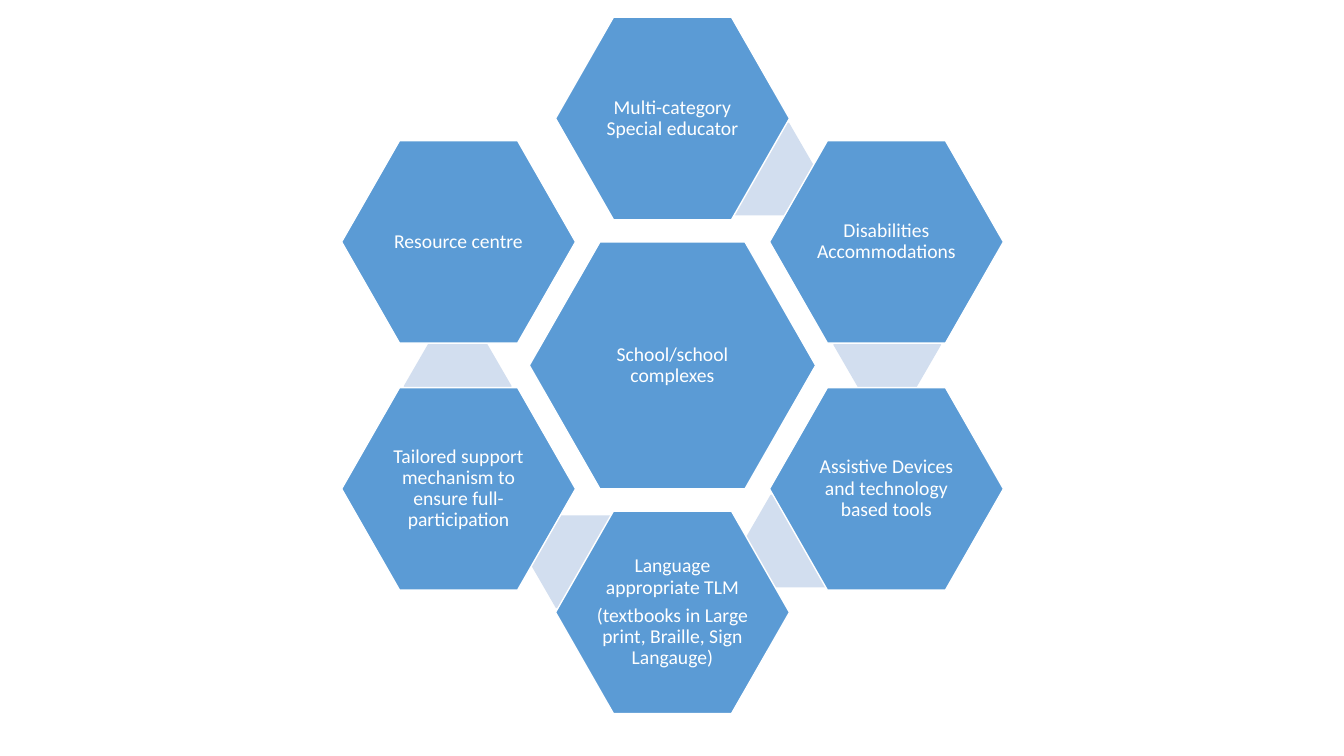
from math import cos, radians, sin

from pptx import Presentation
from pptx.dml.color import RGBColor
from pptx.enum.shapes import MSO_SHAPE as SHAPE
from pptx.enum.text import MSO_ANCHOR as ANCHOR, PP_ALIGN as ALIGN
from pptx.util import Inches, Pt

BLUE, PALE, WHITE = "5B9BD5", "D2DEEF", "FFFFFF"
CENTRE = "School/school complexes"
SUPPORTS = [
    ["Multi-category Special educator"],
    ["Disabilities Accommodations"],
    ["Assistive Devices and technology based tools"],
    ["Language appropriate TLM", "(textbooks in Large print, Braille, Sign Langauge)"],
    ["Tailored support mechanism to ensure full-participation"],
    ["Resource centre"],
]


def colour(value):
    return RGBColor.from_string(value)


def add_text(tf, paragraphs, size=14, font="Calibri", color=WHITE):
    tf.word_wrap = True
    tf.vertical_anchor = ANCHOR.MIDDLE
    tf.margin_left = tf.margin_right = Inches(0.02)
    tf.margin_top = tf.margin_bottom = Inches(0.02)
    for i, text in enumerate(paragraphs):
        p = tf.add_paragraph() if i else tf.paragraphs[0]
        p.alignment = ALIGN.CENTER
        p.line_spacing = 0.9
        p.space_after = Pt(size * 0.35)
        r = p.add_run()
        r.text = text
        r.font.size = Pt(size)
        r.font.name = font
        r.font.color.rgb = colour(color)


def add_hexagon(s, x, y, w, h, fill, line=None, slant=0.286):
    sp = s.shapes.add_shape(SHAPE.HEXAGON, Inches(x - w / 2), Inches(y - h / 2),
                            Inches(w), Inches(h))
    sp.adjustments[0] = slant
    sp.shadow.inherit = False
    sp.fill.solid()
    sp.fill.fore_color.rgb = colour(fill)
    if line:
        sp.line.color.rgb = colour(line)
        sp.line.width = Pt(1)
    else:
        sp.line.fill.background()
    return sp


def add_hexagon_ring(s, left, top, width, height):
    x, y = left + width / 2, top + height / 2
    step = 360 / len(SUPPORTS)

    def around(radius, degrees):
        angle = radians(degrees)
        return x + radius * sin(angle), y - radius * cos(angle)

    hub = add_hexagon(s, x, y, 2.84, 2.45, BLUE, WHITE)
    add_text(hub.text_frame, [CENTRE])
    for i in range(len(SUPPORTS) - 1):
        add_hexagon(s, *around(2.14, 24.5 + step * i), 1.07, 0.92, PALE, slant=0.289)
    for i, paragraphs in enumerate(SUPPORTS):
        sp = add_hexagon(s, *around(2.45, step * i), 2.32, 2.01, BLUE, WHITE)
        add_text(sp.text_frame, paragraphs)


def main():
    prs = Presentation()
    prs.slide_width, prs.slide_height = Inches(13.33), Inches(7.5)
    s = prs.slides.add_slide(prs.slide_layouts[6])
    add_hexagon_ring(s, 3.37, 0.17, 6.6, 6.91)
    prs.save("out.pptx")


if __name__ == "__main__":
    main()
